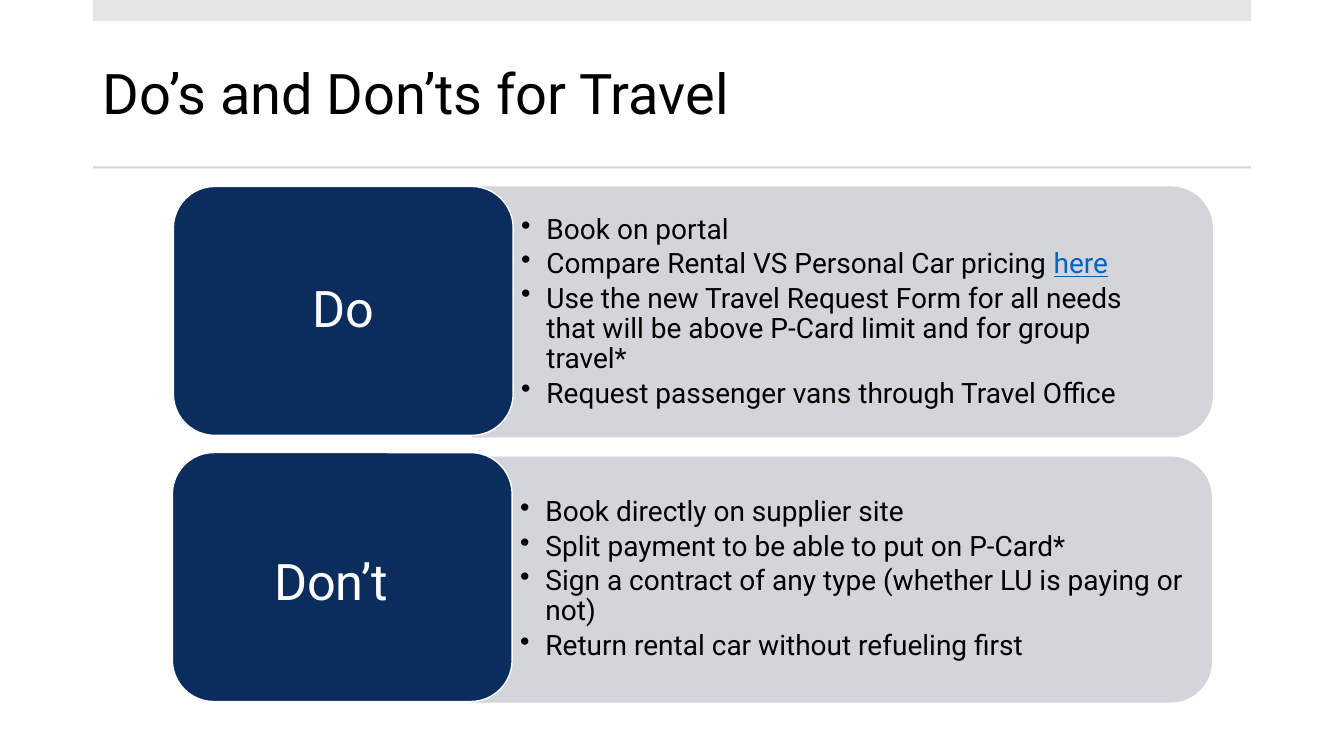
from dataclasses import dataclass

from lxml import etree
from pptx import Presentation
from pptx import util as u
from pptx.dml.color import RGBColor
from pptx.enum import shapes, text
from pptx.oxml import ns

FONT = "Roboto"
COLORS = {
    "black": "000000",
    "white": "FFFFFF",
    "band": "E7E6E6",
    "rule": "D5D5D5",
    "panel": "D0D1D6",
    "navy": "0B2D5D",
    "link": "0563C1",
}
LEFT, WIDTH = 0.92, 11.49
LABEL_WIDTH, LABEL_HEIGHT = 3.37, 2.47
PANEL_WIDTH = 7.35
LINK_WORD = "here"


@dataclass(frozen=True)
class Card:
    label: str
    bullets: list[str]
    left: float
    top: float
    panel_top: float
    panel_height: float
    right_margin: float
    label_shift: tuple[float, float] = (0, 0)  # extra right and top margins


CARDS = [
    Card("Do", [
        "Book on portal",
        "Compare Rental VS Personal Car pricing here",
        "Use the new Travel Request Form for all needs that will be above "
        "P-Card limit and for group travel*",
        "Request passenger vans through Travel Office",
    ], 1.72, 1.85, 1.85, 2.49, 0.27),
    Card("Don’t", [
        "Book directly on supplier site",
        "Split payment to be able to put on P-Card*",
        "Sign a contract of any type (whether LU is paying or not)",
        "Return rental car without refueling first",
    ], 1.71, 4.49, 4.53, 2.44, 0.06, (0.22, 0.14)),
]


def rgb(name: str) -> RGBColor:
    return RGBColor.from_string(COLORS[name])


def style_font(font, size: float, color: str) -> None:
    font.name = FONT
    font.size = u.Pt(size)
    font.color.rgb = rgb(color)


def set_margins(frame, left: float, top: float, right: float, bottom: float) -> None:
    frame.margin_left, frame.margin_top = u.Inches(left), u.Inches(top)
    frame.margin_right, frame.margin_bottom = u.Inches(right), u.Inches(bottom)
    frame.vertical_anchor = text.MSO_ANCHOR.MIDDLE
    frame.word_wrap = True


def add_block(page, kind, left: float, top: float, width: float, height: float, fill: str):
    block = page.shapes.add_shape(
        kind, u.Inches(left), u.Inches(top), u.Inches(width), u.Inches(height))
    block.shadow.inherit = False
    block.fill.solid()
    block.fill.fore_color.rgb = rgb(fill)
    block.line.fill.background()
    return block


def add_title(page, words: str) -> None:
    title = page.shapes.title
    title.left, title.top = u.Inches(LEFT), u.Inches(0.37)
    title.width, title.height = u.Inches(WIDTH), u.Inches(1.18)
    frame = title.text_frame
    frame.text = words
    frame.auto_size = text.MSO_AUTO_SIZE.NONE
    frame.vertical_anchor = text.MSO_ANCHOR.MIDDLE
    para = frame.paragraphs[0]
    para.alignment = text.PP_ALIGN.LEFT
    para.line_spacing = 0.9
    style_font(para.runs[0].font, 40, "black")


def add_panel(page, card: Card) -> None:
    """Draw the pale panel, a top-rounded rectangle turned to face right."""
    left = card.left + 2.96
    panel = add_block(
        page, shapes.MSO_SHAPE.ROUND_2_SAME_RECTANGLE,
        left + (PANEL_WIDTH - card.panel_height) / 2,
        card.panel_top + (card.panel_height - PANEL_WIDTH) / 2,
        card.panel_height, PANEL_WIDTH, "panel")
    panel.rotation = 90
    color = panel.fill._xPr.find(".//" + ns.qn("a:srgbClr"))
    etree.SubElement(color, ns.qn("a:alpha"), val="90000")


def add_bullets(page, card: Card) -> None:
    box = page.shapes.add_textbox(
        u.Inches(card.left + 2.95), u.Inches(card.panel_top + 0.12),
        u.Inches(7.23), u.Inches(card.panel_height - 0.24))
    frame = box.text_frame
    set_margins(frame, 0.5, 0.03, card.right_margin, 0.03)
    frame.text = "\n".join(card.bullets)
    for para in frame.paragraphs:
        para.line_spacing = 0.9
        para.space_after = u.Pt(3)
        properties = para._p.get_or_add_pPr()
        properties.set("marL", str(u.Inches(0.25)))
        properties.set("indent", str(-u.Inches(0.25)))
        etree.SubElement(properties, ns.qn("a:buChar"), char="•")
        span = para.runs[0]
        style_font(span.font, 20, "black")
        if span.text.endswith(" " + LINK_WORD):
            span.text = span.text.removesuffix(LINK_WORD)
            link = para.add_run()
            link.text = LINK_WORD
            style_font(link.font, 20, "link")
            link.font.underline = True


def add_label(page, card: Card) -> None:
    label = add_block(page, shapes.MSO_SHAPE.ROUNDED_RECTANGLE, card.left, card.top,
                      LABEL_WIDTH, LABEL_HEIGHT, "navy")
    label.line.color.rgb = rgb("white")
    label.line.width = u.Pt(1)
    frame = label.text_frame
    shift_left, shift_down = card.label_shift
    set_margins(frame, 0.15, 0.07 + shift_down, 0.15 + shift_left, 0.07)
    frame.text = card.label
    para = frame.paragraphs[0]
    para.alignment = text.PP_ALIGN.CENTER
    para.line_spacing = 0.9
    style_font(para.runs[0].font, 36, "white")


def main() -> None:
    deck = Presentation()
    deck.slide_width, deck.slide_height = u.Inches(13.33), u.Inches(7.5)
    page = deck.slides.add_slide(deck.slide_layouts.get_by_name("Title Only"))
    add_title(page, "Do’s and Don’ts for Travel")
    add_block(page, shapes.MSO_SHAPE.RECTANGLE, LEFT, 0, WIDTH, 0.21, "band")
    add_block(page, shapes.MSO_SHAPE.RECTANGLE, LEFT, 1.65, WIDTH, 0.02, "rule")
    for card in CARDS:
        add_panel(page, card)
        add_bullets(page, card)
        add_label(page, card)
    deck.save("out.pptx")


if __name__ == "__main__":
    main()
